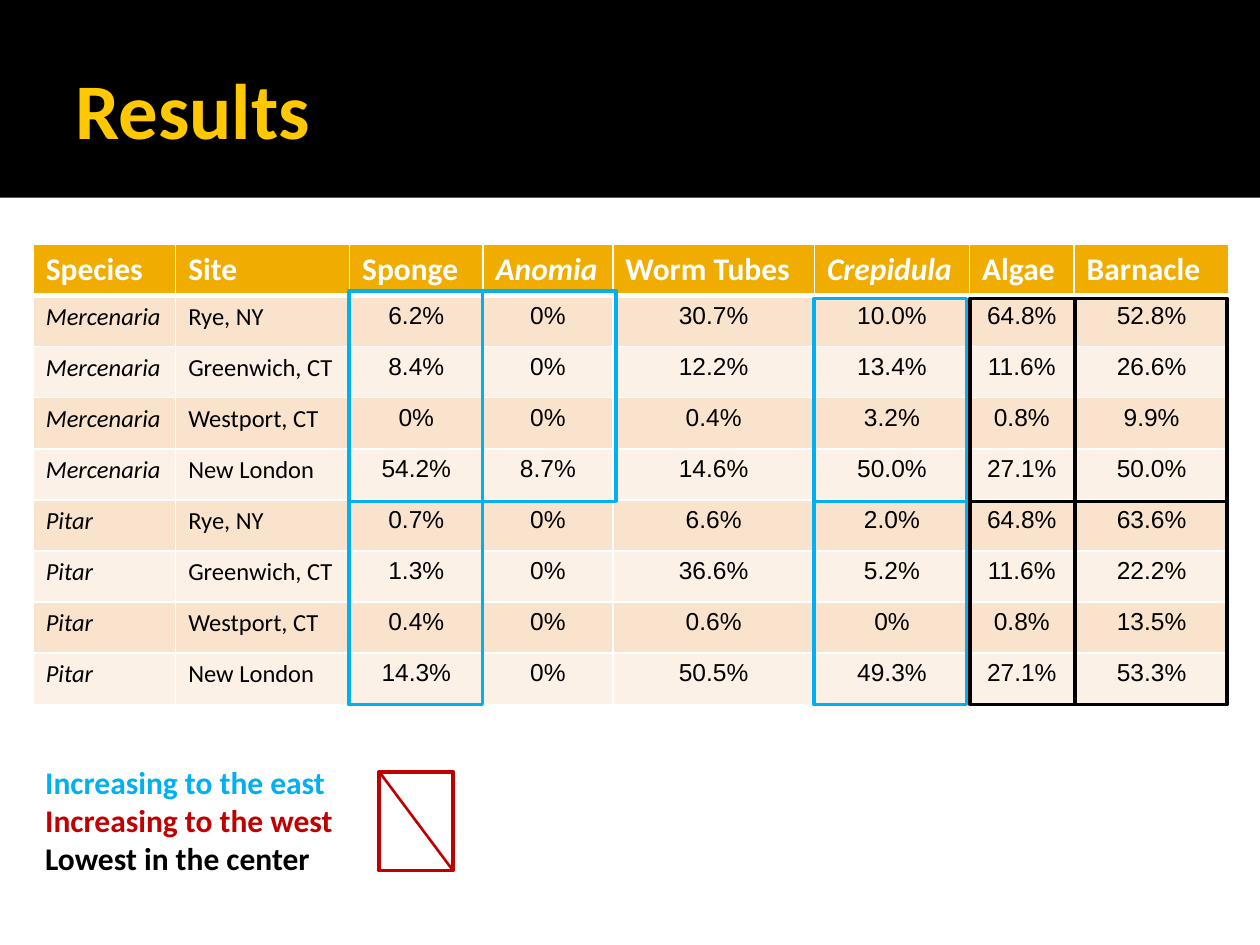
from lxml.etree import SubElement
from pptx import Presentation
from pptx.dml.color import RGBColor
from pptx.enum.shapes import MSO_CONNECTOR, MSO_SHAPE
from pptx.enum.text import MSO_ANCHOR, PP_ALIGN
from pptx.oxml.ns import qn
from pptx.util import Pt

BLACK = RGBColor(0x00, 0x00, 0x00)
WHITE = RGBColor(0xFF, 0xFF, 0xFF)
GOLD = RGBColor(0xFF, 0xC8, 0x00)
HEADER = RGBColor(0xF0, 0xAD, 0x00)
BANDS = (RGBColor(0xF9, 0xE3, 0xCC), RGBColor(0xFC, 0xF1, 0xE7))
BLUE = RGBColor(0x00, 0xB0, 0xF0)
RED = RGBColor(0xC0, 0x00, 0x00)

HEADINGS = ["Species", "Site", "Sponge", "Anomia", "Worm Tubes", "Crepidula", "Algae", "Barnacle"]
GENERA = {"Anomia", "Crepidula", "Mercenaria", "Pitar"}
SITES = ["Rye, NY", "Greenwich, CT", "Westport, CT", "New London"]
COVERAGE = {
    "Mercenaria": ["6.2% 0% 30.7% 10.0% 64.8% 52.8%",
                   "8.4% 0% 12.2% 13.4% 11.6% 26.6%",
                   "0% 0% 0.4% 3.2% 0.8% 9.9%",
                   "54.2% 8.7% 14.6% 50.0% 27.1% 50.0%"],
    "Pitar": ["0.7% 0% 6.6% 2.0% 64.8% 63.6%",
              "1.3% 0% 36.6% 5.2% 11.6% 22.2%",
              "0.4% 0% 0.6% 0% 0.8% 13.5%",
              "14.3% 0% 50.5% 49.3% 27.1% 53.3%"],
}
COLUMN_WIDTHS = [81.4, 99.4, 76.3, 74.2, 115.2, 88.6, 59.8, 88.6]
ROW_HEIGHT = 29.2

# Trend frames: left and width by column, top and height by species
SPONGE, ANOMIA = (199.4, 76.3), (275.8, 76.3)
CREPIDULA, ALGAE, BARNACLE = (465.1, 87.1), (554.4, 59.8), (614.2, 87.1)
MERCENARIA_TALL, MERCENARIA, PITAR = (166.3, 120.2), (170.6, 115.9), (286.6, 115.9)
FRAMES = [
    (SPONGE, MERCENARIA_TALL, BLUE), (ANOMIA, MERCENARIA_TALL, BLUE), (SPONGE, PITAR, BLUE),
    (CREPIDULA, PITAR, BLUE), (CREPIDULA, MERCENARIA, BLUE),
    (BARNACLE, MERCENARIA, BLACK), (BARNACLE, PITAR, BLACK),
    (ALGAE, MERCENARIA, BLACK), (ALGAE, PITAR, BLACK),
]
LEGEND = [("Increasing to the east", BLUE), ("Increasing to the west", RED),
          ("Lowest in the center", BLACK)]


class SlideBuilder:
    title_style = {"name": "Calibri", "size": Pt(45), "bold": True}
    strong_style = {"name": "Calibri", "size": Pt(18), "bold": True}
    label_style = {"name": "Calibri", "size": Pt(14), "bold": False}
    value_style = {"name": "Arial", "size": Pt(14), "bold": False}

    def __init__(self, page):
        self.page = page

    def add_text(self, para, text, style, color, **extra):
        span = para.add_run()
        span.text = text
        for name, value in {**style, **extra}.items():
            setattr(span.font, name, value)
        span.font.color.rgb = color

    def title(self, text, left, top, width, height):
        box = self.page.shapes.title
        placing = {"left": left, "top": top, "width": width, "height": height}
        for name, value in placing.items():
            setattr(box, name, Pt(value))
        frame = box.text_frame
        layout = {"vertical_anchor": MSO_ANCHOR.MIDDLE, "margin_left": Pt(7.2),
                  "margin_top": Pt(3.6), "margin_right": Pt(3.6), "margin_bottom": Pt(3.6)}
        for name, value in layout.items():
            setattr(frame, name, value)
        para = frame.paragraphs[0]
        para.alignment = PP_ALIGN.LEFT
        self.add_text(para, text, self.title_style, GOLD)
        return box

    def rectangle(self, left, top, width, height, fill=None, line=None, parent=None):
        shapes = (parent or self.page).shapes
        box = shapes.add_shape(MSO_SHAPE.RECTANGLE, Pt(left), Pt(top), Pt(width), Pt(height))
        box.shadow.inherit = False
        if fill is None:
            box.fill.background()
        else:
            box.fill.solid()
            box.fill.fore_color.rgb = fill
        if line is None:
            box.line.fill.background()
        else:
            box.line.color.rgb = line
            box.line.width = Pt(2)
        return box

    def crossed_box(self, left, top, width, height, color):
        group = self.page.shapes.add_group_shape()
        self.rectangle(left, top, width, height, line=color, parent=group)
        stroke = group.shapes.add_connector(
            MSO_CONNECTOR.STRAIGHT, Pt(left), Pt(top), Pt(left + width), Pt(top + height))
        stroke.line.color.rgb = color
        stroke.line.width = Pt(1.5)
        SubElement(stroke._element.spPr, qn("a:effectLst"))

    def borders(self, cell, top=1, bottom=1):
        properties = cell._tc.get_or_add_tcPr()
        for side, width in {"L": 1, "R": 1, "T": top, "B": bottom}.items():
            edge = SubElement(properties, qn(f"a:ln{side}"), w=str(Pt(width)))
            fill = SubElement(edge, qn("a:solidFill"))
            SubElement(fill, qn("a:srgbClr"), val=str(WHITE))

    def table(self, rows, left, top):
        table = self.page.shapes.add_table(
            len(rows), len(COLUMN_WIDTHS), Pt(left), Pt(top),
            Pt(sum(COLUMN_WIDTHS)), Pt(ROW_HEIGHT * len(rows))).table
        for column, width in zip(table.columns, COLUMN_WIDTHS):
            column.width = Pt(width)
        for r, texts in enumerate(rows):
            table.rows[r].height = Pt(ROW_HEIGHT)
            for c, text in enumerate(texts):
                cell = table.cell(r, c)
                self.borders(cell, top=3 if r == 1 else 1, bottom=3 if r == 0 else 1)
                cell.fill.solid()
                cell.fill.fore_color.rgb = HEADER if r == 0 else BANDS[(r - 1) % 2]
                para = cell.text_frame.paragraphs[0]
                if r == 0:
                    style, color = self.strong_style, WHITE
                elif c < 2:
                    style, color = self.label_style, BLACK
                else:
                    style, color = self.value_style, BLACK
                    para.alignment = PP_ALIGN.CENTER
                self.add_text(para, text, style, color, italic=text in GENERA)

    def legend(self, lines, left, top, width, height):
        box = self.page.shapes.add_textbox(Pt(left), Pt(top), Pt(width), Pt(height))
        frame = box.text_frame
        frame.word_wrap = True
        for index, (text, color) in enumerate(lines):
            para = frame.add_paragraph() if index else frame.paragraphs[0]
            self.add_text(para, text, self.strong_style, color)


def main():
    deck = Presentation()
    deck.slide_width, deck.slide_height = Pt(720), Pt(540)
    page = deck.slides.add_slide(deck.slide_layouts[5])
    builder = SlideBuilder(page)

    # Title on a black band, with the band behind it
    title = builder.title("Results", 36, 12.2, 648, 98.6)
    band = builder.rectangle(0, 0, 720, 113, fill=BLACK)
    title._element.addprevious(band._element)

    # Coverage table
    rows = [HEADINGS]
    for species, lines in COVERAGE.items():
        rows += [[species, site, *line.split()] for site, line in zip(SITES, lines)]
    builder.table(rows, 19, 139.7)

    # Frames that mark the trends
    for (left, width), (top, height), color in FRAMES:
        builder.rectangle(left, top, width, height, line=color)

    # Legend
    builder.crossed_box(216.7, 441, 42.2, 56.5, RED)
    builder.legend(LEGEND, 18.7, 432.7, 296.6, 72.7)

    deck.save("out.pptx")


if __name__ == "__main__":
    main()
